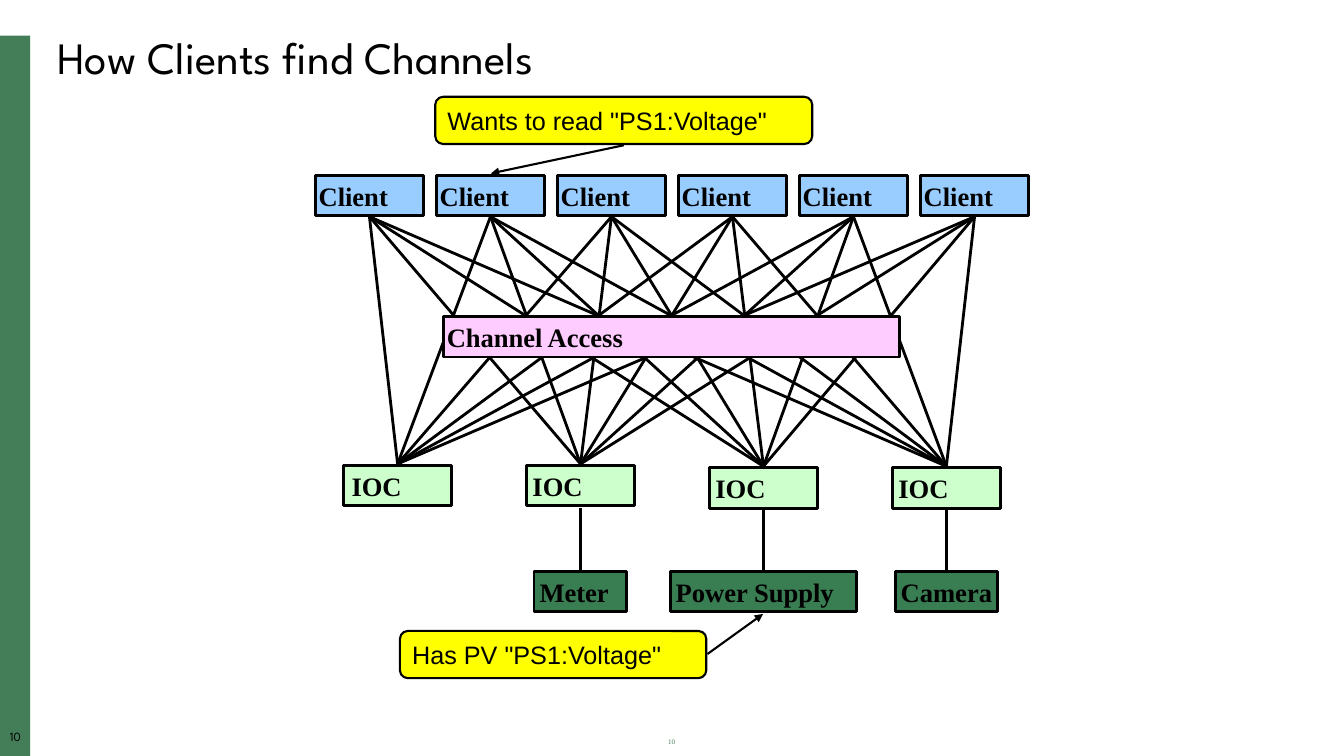
from lxml import etree
from pptx import Presentation
from pptx import util as u
from pptx.dml.color import RGBColor
from pptx.enum import shapes, text
from pptx.oxml.ns import qn


def color(value):
    return RGBColor.from_string(value)


def write(box, words, font="Times New Roman", size=19, ink="000000", bold=False,
          align=text.PP_ALIGN.LEFT, anchor=text.MSO_ANCHOR.MIDDLE,
          insets=(0.25, 0.13, 0.25, 0.13), spacing=1.0):
    frame = box.text_frame
    frame.word_wrap = True
    frame.vertical_anchor = anchor
    frame.margin_left, frame.margin_top, frame.margin_right, frame.margin_bottom = (
        u.Cm(inset) for inset in insets)
    para = frame.paragraphs[0]
    para.alignment = align
    para.line_spacing = spacing
    span = para.add_run()
    span.text = words
    span.font.name = font
    span.font.size = u.Pt(size)
    span.font.bold = bold
    span.font.color.rgb = color(ink)


class Diagram:
    black = "000000"
    blue, green, dark_green = "99CCFF", "CCFFCC", "397D52"
    pink, yellow, bar_green = "FFCCFF", "FFFF00", "447E59"
    heading_font = "League Spartan"

    def __init__(self, page):
        self.page = page

    def shape(self, kind, place, fill, line_width=None):
        box = self.page.shapes.add_shape(kind, *map(u.Cm, place))
        box.shadow.inherit = False
        box.fill.solid()
        box.fill.fore_color.rgb = color(fill)
        if line_width:
            box.line.color.rgb = color(self.black)
            box.line.width = u.Pt(line_width)
        else:
            box.line.fill.background()
        return box

    def node(self, words, left, top, width, fill, inset=0.14):
        box = self.shape(shapes.MSO_SHAPE.RECTANGLE, (left, top, width, 1.02), fill, 2)
        write(box, words, bold=True, insets=(inset, 0.05, 0, 0.05))

    def callout(self, words, left, top, width):
        box = self.shape(shapes.MSO_SHAPE.ROUNDED_RECTANGLE,
                         (left, top, width, 1.19), self.yellow, 1.5)
        box.adjustments[0] = 0.167
        write(box, words, font="Arial", size=18)

    def label(self, words, place, **style):
        write(self.page.shapes.add_textbox(*map(u.Cm, place)), words, **style)

    def line(self, start, end, width=2, arrow=False):
        link = self.page.shapes.add_connector(
            shapes.MSO_CONNECTOR.STRAIGHT, *map(u.Cm, start + end))
        link.line.color.rgb = color(self.black)
        link.line.width = u.Pt(width)
        if arrow:
            etree.SubElement(link.line._get_or_add_ln(), qn("a:tailEnd"), type="triangle")
        etree.SubElement(link._element.spPr, qn("a:effectLst"))


def main():
    deck = Presentation()
    deck.slide_width, deck.slide_height = u.Cm(33.87), u.Cm(19.05)
    page = deck.slides.add_slide(deck.slide_layouts[6])
    diagram = Diagram(page)
    center = text.PP_ALIGN.CENTER
    top = text.MSO_ANCHOR.TOP

    diagram.shape(shapes.MSO_SHAPE.RECTANGLE, (0, 0.9, 0.76, 18.15), diagram.bar_green)
    diagram.label("10", (0, 18.4, 0.78, 0.43), font=diagram.heading_font, size=9,
                  align=center, anchor=top, insets=(0, 0, 0, 0), spacing=0.9)
    diagram.label("10", (12.9, 18.52, 8.05, 0.5), size=5, ink=diagram.bar_green,
                  align=center, anchor=top, spacing=0.9)
    diagram.label("How Clients find Channels", (1.19, 0.76, 31.75, 1.5),
                  font=diagram.heading_font, size=32, anchor=top, spacing=0.9)

    node_width = 2.72
    client_lefts = [7.95 + 3.05 * i for i in range(6)]
    ioc_places = [(8.66 + 4.61 * i, 11.73 if i < 2 else 11.79) for i in range(4)]

    for left in client_lefts:
        diagram.node("Client", left, 4.42, node_width, diagram.blue, inset=0.08)
    for i, (left, ioc_top) in enumerate(ioc_places):
        diagram.node("IOC", left, ioc_top, node_width, diagram.green,
                     inset=0.15 if i else 0.2)
        ioc_middle = left + node_width / 2
        for client_left in client_lefts:
            diagram.line((client_left + node_width / 2, 5.46), (ioc_middle, ioc_top - 0.04))
        if i:
            diagram.line((ioc_middle, ioc_top + 1.06), (ioc_middle, 14.38))

    devices = [("Meter", 13.46, 2.34), ("Power Supply", 16.89, 4.7), ("Camera", 22.56, 2.59)]
    for name, left, width in devices:
        diagram.node(name, left, 14.4, width, diagram.dark_green)
    diagram.node("Channel Access", 11.18, 7.98, 11.48, diagram.pink, inset=0.08)

    diagram.callout('Has PV "PS1:Voltage"', 10.08, 15.9, 7.72)
    diagram.line((17.83, 16.48), (19.23, 15.47), width=1.5, arrow=True)
    diagram.callout('Wants to read "PS1:Voltage"', 10.97, 2.44, 9.5)
    diagram.line((15.72, 3.66), (12.37, 4.37), width=1.5, arrow=True)

    deck.save("out.pptx")


if __name__ == "__main__":
    main()
